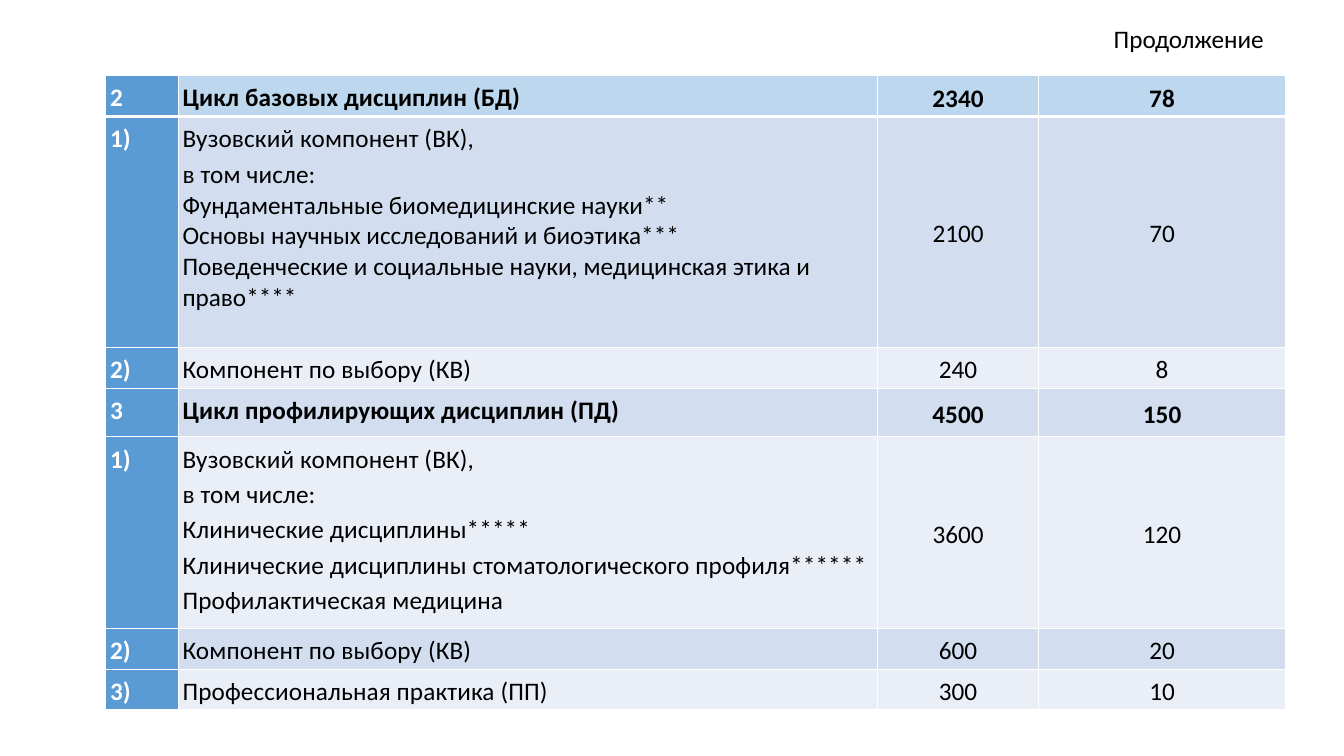
"""Builds a slide with the continued table of discipline cycles."""
from lxml import etree
from pptx import Presentation
from pptx.dml.color import RGBColor
from pptx.enum import text
from pptx.oxml import ns
from pptx.util import Pt


def write(para, wording, color="000000", bold=False, spacing=0):
    span = para.add_run()
    span.text = wording
    for name, value in {"name": "Calibri", "size": Pt(18), "bold": bold}.items():
        setattr(span.font, name, value)
    span.font.color.rgb = RGBColor.from_string(color)
    if spacing:
        span.font._element.set("spc", str(spacing))


def border(cell, side, width):
    line = etree.SubElement(cell._tc.get_or_add_tcPr(), ns.qn("a:ln" + side), w=str(Pt(width)))
    fill = etree.SubElement(line, ns.qn("a:solidFill"))
    etree.SubElement(fill, ns.qn("a:srgbClr"), val="FFFFFF")


deck = Presentation()
deck.slide_width, deck.slide_height = Pt(960), Pt(540)
page = deck.slides.add_slide(deck.slide_layouts[6])

LABEL, HEADER, DARK, LIGHT = "5B9BD5", "BDD7EE", "D2DEEF", "EAEFF7"
basic = ["Вузовский компонент (ВК),", "в том числе:", "Фундаментальные биомедицинские науки**",
         "Основы научных исследований и биоэтика***",
         "Поведенческие и социальные науки, медицинская этика и право****"]
major = ["Вузовский компонент (ВК),", "в том числе:", "Клинические дисциплины*****",
         "Клинические дисциплины стоматологического профиля******", "Профилактическая медицина"]
rows = [
    (27.4, HEADER, True, "2", ["Цикл базовых дисциплин (БД)"], "2340", "78"),
    (164.9, DARK, False, "1)", basic, "2100", "70"),
    (27.4, LIGHT, False, "2)", ["Компонент по выбору (КВ)"], "240", "8"),
    (34.5, DARK, True, "3", ["Цикл профилирующих дисциплин (ПД)"], "4500", "150"),
    (136.8, LIGHT, False, "1)", major, "3600", "120"),
    (27.4, DARK, False, "2)", ["Компонент по выбору (КВ)"], "600", "20"),
    (27.4, LIGHT, False, "3)", ["Профессиональная практика (ПП)"], "300", "10"),
]
widths = [51.8, 499.7, 114.5, 177]

table = page.shapes.add_table(len(rows), len(widths), Pt(75.6), Pt(54),
                              Pt(sum(widths)), Pt(sum(row[0] for row in rows))).table
for column, width in zip(table.columns, widths):
    column.width = Pt(width)

for index, (height, shade, bold, label, names, hours, credits) in enumerate(rows):
    table.rows[index].height = Pt(height)
    for column, lines in enumerate([[label], names, [hours], [credits]]):
        cell = table.cell(index, column)
        is_label, is_number = column == 0, column > 1
        margins = {"margin_left": 3, "margin_right": 3, "margin_top": 2, "margin_bottom": 2}
        for name, value in margins.items():
            setattr(cell, name, Pt(value))
        cell.vertical_anchor = text.MSO_ANCHOR.MIDDLE if is_number else text.MSO_ANCHOR.TOP
        for side in "LRTB":
            border(cell, side, 3 if (index, side) in [(0, "B"), (1, "T")] else 1)
        cell.fill.solid()
        cell.fill.fore_color.rgb = RGBColor.from_string(LABEL if is_label else shade)
        for position, wording in enumerate(lines):
            para = cell.text_frame.paragraphs[0] if position == 0 else cell.text_frame.add_paragraph()
            para.alignment = text.PP_ALIGN.CENTER if is_number else text.PP_ALIGN.LEFT
            tight = lines is basic and position > 1
            para.line_spacing = 1.0 if tight else 1.15
            spaced = bold or not is_number and not tight
            write(para, wording, "FFFFFF" if is_label else "000000", bold or is_label, 10 if spaced else 0)

box = page.shapes.add_textbox(Pt(788.4), Pt(13), Pt(123), Pt(29))
box.text_frame.word_wrap = False
box.text_frame.auto_size = text.MSO_AUTO_SIZE.SHAPE_TO_FIT_TEXT
write(box.text_frame.paragraphs[0], "Продолжение")

deck.save("out.pptx")
